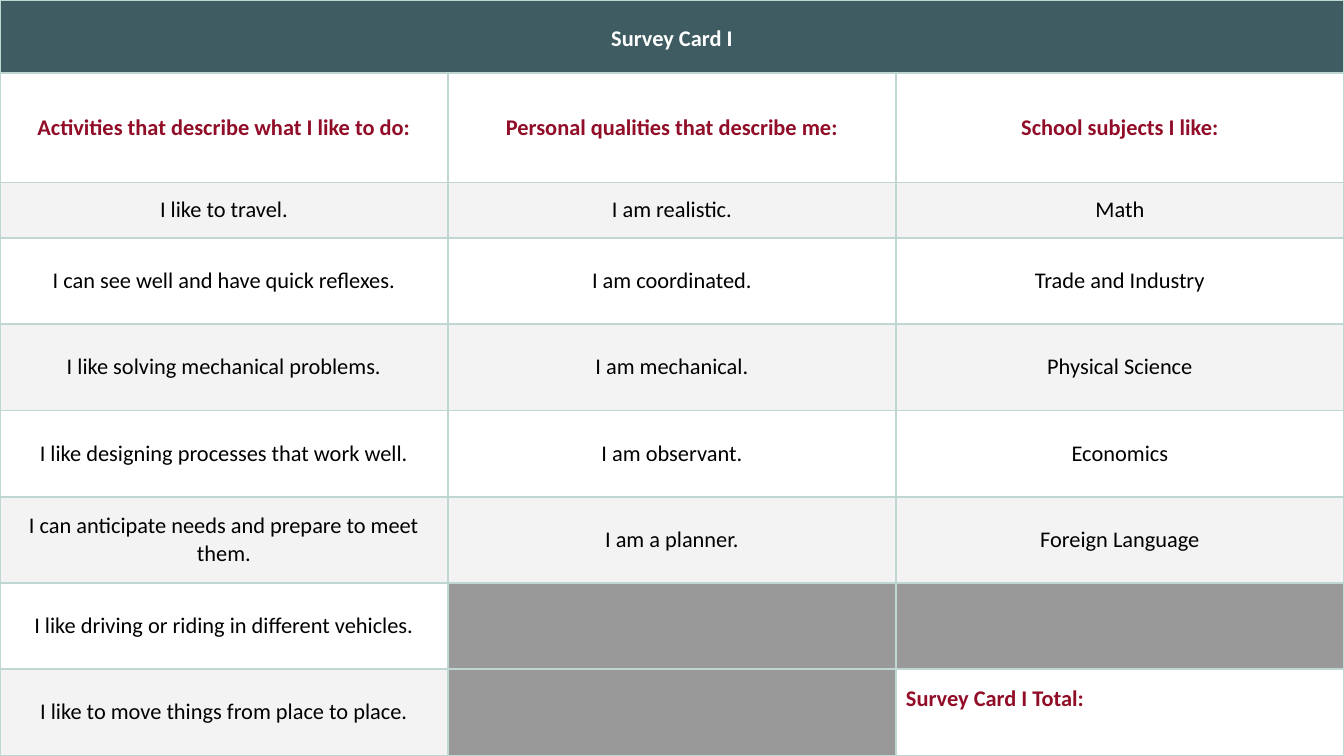
"""Build the Survey Card I slide, a table of likes, qualities and subjects."""
from collections import namedtuple

from lxml import etree
from pptx import Presentation
from pptx import util as u
from pptx.dml.color import RGBColor
from pptx.enum import text
from pptx.oxml import ns

Theme = namedtuple("Theme", "font size teal red black white pale grey rule")
theme = Theme("Calibri", u.Pt(12), "3E5C61", "910D28", "000000", "FFFFFF",
              "F3F3F3", "999999", "BED7D3")

title = "Survey Card I"
total = "Survey Card I Total:"
rows = [
    (title, "", ""),
    ("Activities that describe what I like to do:",
     "Personal qualities that describe me:", "School subjects I like:"),
    ("I like to travel.", "I am realistic.", "Math"),
    ("I can see well and have quick reflexes.", "I am coordinated.",
     "Trade and Industry"),
    ("I like solving mechanical problems.", "I am mechanical.",
     "Physical Science"),
    ("I like designing processes that work well.", "I am observant.",
     "Economics"),
    ("I can anticipate needs and prepare to meet them.", "I am a planner.",
     "Foreign Language"),
    ("I like driving or riding in different vehicles.", "", ""),
    ("I like to move things from place to place.", "", total),
]
highs = [1.38, 2.07, 1.05] + [1.63] * 6
wide, high, pad = u.Cm(25.4), u.Cm(14.29), u.Cm(0.19)


def rule(cell):
    props = cell._tc.get_or_add_tcPr()
    for spot, side in enumerate("LRTB"):
        line = etree.Element(ns.qn(f"a:ln{side}"), w=str(u.Pt(1)))
        fill = etree.SubElement(line, ns.qn("a:solidFill"))
        etree.SubElement(fill, ns.qn("a:srgbClr"), val=theme.rule)
        props.insert(spot, line)


deck = Presentation()
deck.slide_width, deck.slide_height = wide, high
slide = deck.slides.add_slide(deck.slide_layouts[6])
table = slide.shapes.add_table(len(rows), 3, 0, 0, wide, high).table
table.first_row = table.horz_banding = False

for r, row in enumerate(rows):
    table.rows[r].height = u.Cm(highs[r])
    for c, words in enumerate(row):
        cell = table.cell(r, c)
        if r == 0:
            shade, ink = theme.teal, theme.white
        elif not words:
            shade, ink = theme.grey, theme.black
        elif r == 1 or words == total:
            shade, ink = theme.white, theme.red
        else:
            shade = theme.white if r % 2 else theme.pale
            ink = theme.black
        cell.fill.solid()
        cell.fill.fore_color.rgb = RGBColor.from_string(shade)
        rule(cell)
        cell.margin_left = cell.margin_right = pad
        cell.margin_top = cell.margin_bottom = pad
        cell.vertical_anchor = text.MSO_ANCHOR.MIDDLE
        cell.text = words
        para = cell.text_frame.paragraphs[0]
        para.alignment = text.PP_ALIGN.CENTER
        para.font.name, para.font.size = theme.font, theme.size
        para.font.bold = ink != theme.black
        para.font.color.rgb = RGBColor.from_string(ink)
        if ink == theme.red:
            para.space_before = u.Pt(10)
        if words == title:
            para.line_spacing, para.space_after = 1.15, u.Pt(6)
        if words == total:
            para.alignment = text.PP_ALIGN.LEFT
            cell.margin_bottom = u.Cm(0.7)

table.cell(0, 0).merge(table.cell(0, 2))
deck.save("out.pptx")
